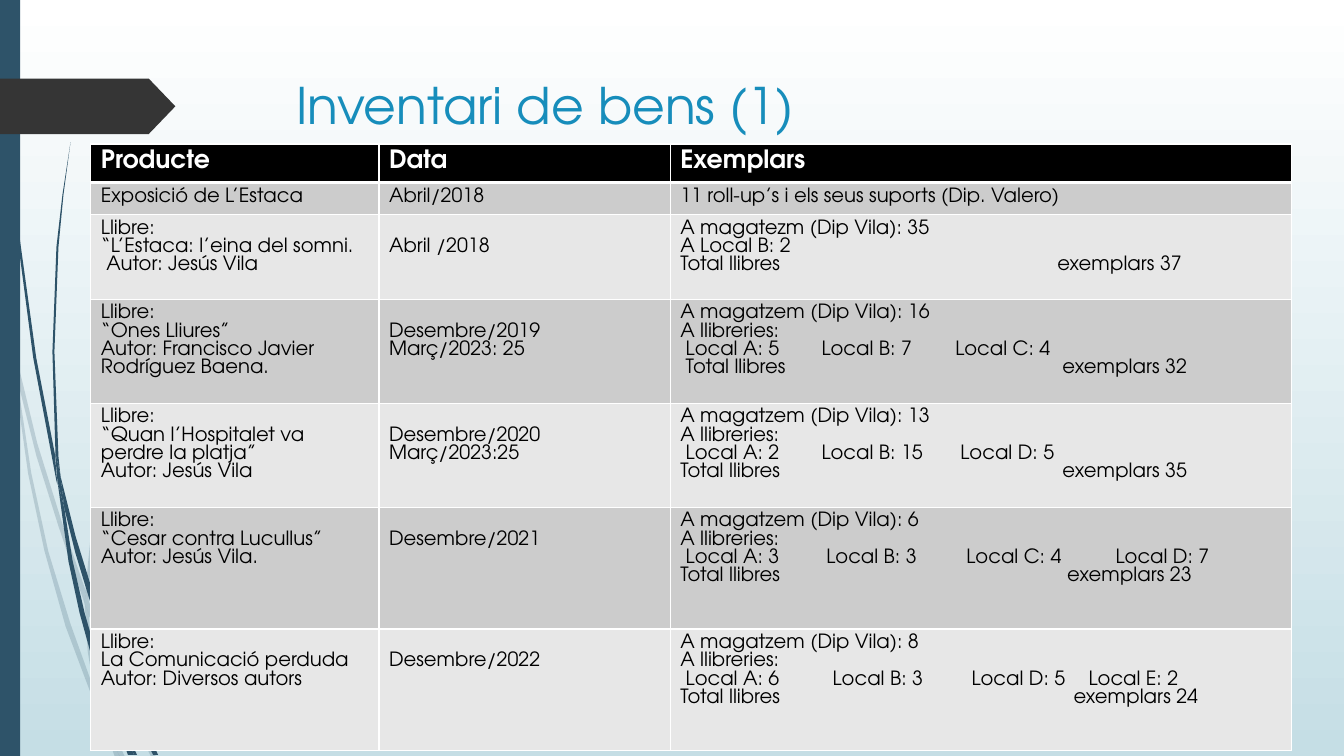
"""Build the slide with the inventory of goods."""
import pptx
import pptx.dml.color
import pptx.enum.shapes
import pptx.enum.text
import pptx.oxml
import pptx.oxml.ns
import pptx.util

Cm = pptx.util.Cm
Pt = pptx.util.Pt
DRAWING = pptx.oxml.ns.nsdecls("a")
NAVY, CHARCOAL, BLUE = "2E5369", "353535", "178DBB"
BLACK, WHITE, BANDS = "000000", "FFFFFF", ("CCCCCC", "E7E7E7")
HUNDREDTH_INCH = Cm(0.0254)

PALE_STEMS = [
    [(11, 350), (9, 322), (0, 282), (0, 299), (10, 344)],
    [(58, 522), (84, 599), (85, 586), (62, 520), (37, 440), (14, 345), (17, 376), (36, 452)],
    [(92, 607), (88, 596), (88, 610), (123, 694), (150, 751), (155, 751), (127, 692)],
    [(119, 751), (124, 751), (105, 711)],
    [(93, 683), (70, 619), (48, 547), (31, 469), (17, 376), (11, 350), (28, 470), (44, 546),
     (65, 621), (92, 693), (101, 714), (99, 707)],
    [(84, 599), (87, 646), (93, 683), (96, 692), (105, 711), (103, 706), (91, 646), (88, 610),
     (88, 608)],
    [(88, 584), (94, 522), (110, 462), (132, 405), (160, 349), (192, 296), (229, 245), (268, 198),
     (290, 175), (312, 154), (312, 153), (289, 175), (268, 197), (228, 244), (190, 295),
     (158, 348), (129, 404), (107, 461), (91, 521), (85, 584), (85, 586), (88, 596)],
    [(101, 714), (114, 751), (119, 751)],
    [(88, 608), (88, 610), (88, 596), (85, 586), (84, 599)],
    [(96, 692), (93, 683), (99, 707), (101, 714), (119, 751), (105, 711)],
]
DARK_STEMS = [
    [(7, 110), (17, 233), (33, 355), (56, 477), (57, 481), (55, 457), (55, 453), (36, 355),
     (19, 232), (8, 109), (5, 48), (4, 0), (3, 0), (4, 48)],
    [(88, 592), (106, 645), (106, 633), (106, 631), (93, 590), (75, 532), (60, 472), (64, 505),
     (75, 549)],
    [(113, 649), (110, 641), (111, 656), (132, 708), (152, 749), (157, 749), (136, 706)],
    [(110, 691), (98, 657), (84, 608), (72, 556), (64, 505), (57, 477), (68, 557), (79, 608),
     (93, 659), (111, 708), (117, 722), (116, 717)],
    [(60, 472), (58, 453), (54, 349), (58, 245), (63, 193), (70, 141), (62, 193), (56, 245),
     (52, 349), (55, 449)],
    [(133, 749), (136, 749), (122, 719)],
    [(57, 477), (64, 505), (60, 472), (55, 449), (55, 453)],
    [(111, 633), (115, 592), (125, 552), (139, 513), (158, 476), (180, 440), (205, 406),
     (231, 374), (245, 359), (261, 344), (260, 344), (245, 358), (231, 373), (204, 405),
     (179, 439), (156, 474), (137, 511), (122, 551), (111, 590), (106, 631), (110, 641)],
    [(117, 722), (127, 749), (131, 749)],
    [(106, 645), (110, 691), (116, 706), (122, 719), (121, 716), (111, 656), (109, 651)],
    [(106, 645), (109, 651), (111, 656), (110, 641), (106, 631), (106, 633)],
    [(116, 706), (110, 691), (116, 717), (117, 722), (130, 749), (133, 749), (122, 719)],
]
COLUMN_WIDTHS = (7.26, 7.34, 15.65)
ROW_HEIGHTS = (0.97, 0.81, 2.13, 2.62, 2.62, 3.07, 3.07)
GOODS = [
    ("Producte", "Data", "Exemplars"),
    ("Exposició de L’Estaca", "Abril/2018", "11 roll-up’s i els seus suports (Dip. Valero)"),
    ("Llibre:\n“L’Estaca: l’eina del somni.\n Autor: Jesús Vila", "Abril /2018",
     "A magatezm (Dip Vila): 35\nA Local B: 2\nTotal llibres\texemplars 37"),
    ("Llibre:\n“Ones Lliures”\nAutor: Francisco Javier Rodríguez Baena.",
     "Desembre/2019\nMarç/2023: 25",
     "A magatzem (Dip Vila): 16\nA llibreries:\n Local A: 5\tLocal B: 7\tLocal C: 4\n"
     " Total llibres\texemplars 32"),
    ("Llibre:\n“Quan l’Hospitalet va perdre la platja”\nAutor: Jesús Vila",
     "Desembre/2020\nMarç/2023:25",
     "A magatzem (Dip Vila): 13\nA llibreries:\n Local A: 2\tLocal B: 15\tLocal D: 5\n"
     "Total llibres\texemplars 35"),
    ("Llibre:\n“Cesar contra Lucullus”\nAutor: Jesús Vila.", "Desembre/2021",
     "A magatzem (Dip Vila): 6\nA llibreries:\n Local A: 3\tLocal B: 3\tLocal C: 4\tLocal D: 7\n"
     "Total llibres\texemplars 23"),
    ("Llibre:\nLa Comunicació perduda\nAutor: Diversos autors", "Desembre/2022",
     "A magatzem (Dip Vila): 8\nA llibreries:\n Local A: 6\tLocal B: 3\tLocal D: 5\tLocal E: 2\n"
     "Total llibres\texemplars 24"),
]
SHOP_TABS = {3: (3.56, 6.93), 4: (3.56, 7.06), 5: (3.68, 7.21, 10.97), 6: (3.84, 7.34, 10.29)}
TOTAL_TABS = {2: 9.5, 3: 9.63, 4: 9.63, 5: 9.75, 6: 9.91}


def colour(value):
    """Turn a hex string into a colour."""
    return pptx.dml.color.RGBColor.from_string(value)


class InventoryPage:
    """Hold the style and the current slide."""

    font = "TeX Gyre Adventor"

    def __init__(self, deck):
        """Add a title-only slide with a vertical gradient."""
        self.page = deck.slides.add_slide(deck.slide_layouts[5])
        fill = self.page.background.fill
        fill.gradient()
        fill.gradient_angle = 270
        for stop, value in zip(fill.gradient_stops, (WHITE, "C5DEE5")):
            stop.color.rgb = colour(value)

    def paint(self, shape, value):
        """Give a shape a plain fill without line or shadow."""
        shape.shadow.inherit = False
        shape.fill.solid()
        shape.fill.fore_color.rgb = colour(value)
        shape.line.fill.background()

    def style(self, para, size, value, bold=False):
        """Format every span of a paragraph."""
        for span in para.runs:
            span.font.name = self.font
            span.font.size = Pt(size)
            span.font.bold = bold
            span.font.color.rgb = colour(value)

    def stems(self, outlines, opacity):
        """Draw a group of curved stems."""
        group = self.page.shapes.add_group_shape()
        for first, *others in outlines:
            builder = group.shapes.build_freeform(*first, scale=HUNDREDTH_INCH)
            builder.add_line_segments(others, close=True)
            stem = builder.convert_to_shape()
            self.paint(stem, NAVY)
            if opacity < 100:
                tint = stem.fill._xPr.find(".//" + pptx.oxml.ns.qn("a:srgbClr"))
                tint.append(pptx.oxml.parse_xml(f'<a:alpha {DRAWING} val="{opacity * 1000}"/>'))

    def block(self, kind, top, width, height, value):
        """Draw a preset shape at the left edge."""
        shape = self.page.shapes.add_shape(kind, 0, Cm(top), Cm(width), Cm(height))
        self.paint(shape, value)
        return shape

    def title(self, text):
        """Fill and place the title placeholder."""
        box = self.page.shapes.title
        box.left, box.top, box.width, box.height = Cm(7.21), Cm(1.73), Cm(24.77), Cm(3.56)
        frame = box.text_frame
        frame.text = text
        frame.word_wrap = True
        frame.auto_size = pptx.enum.text.MSO_AUTO_SIZE.NONE
        frame.vertical_anchor = pptx.enum.text.MSO_ANCHOR.TOP
        frame.paragraphs[0].alignment = pptx.enum.text.PP_ALIGN.LEFT
        self.style(frame.paragraphs[0], 36, BLUE)

    def borders(self, cell, row):
        """Draw white cell borders, thicker under the header."""
        widths = {"L": 1, "R": 1, "T": 3 if row == 1 else 1, "B": 3 if row == 0 else 1}
        properties = cell._tc.get_or_add_tcPr()
        for side, width in widths.items():
            properties.append(pptx.oxml.parse_xml(
                f'<a:ln{side} {DRAWING} w="{Pt(width)}"><a:solidFill>'
                f'<a:srgbClr val="{WHITE}"/></a:solidFill></a:ln{side}>'))

    def tabs(self, para, stops):
        """Set left tab stops on a paragraph."""
        marks = "".join(f'<a:tab pos="{Cm(stop)}" algn="l"/>' for stop in stops)
        para._p.get_or_add_pPr().append(
            pptx.oxml.parse_xml(f"<a:tabLst {DRAWING}>{marks}</a:tabLst>"))

    def cell(self, cell, row, column, text):
        """Fill and format one table cell."""
        header = row == 0
        self.borders(cell, row)
        cell.fill.solid()
        cell.fill.fore_color.rgb = colour(BLACK if header else BANDS[(row - 1) % 2])
        cell.margin_top = Cm(0.13) + (Pt(13) if column == 1 and row > 1 else 0)
        cell.text_frame.text = text
        for para in cell.text_frame.paragraphs:
            para.line_spacing = Pt(17 if header else 13)
            self.style(para, 18 if header else 14, WHITE if header else BLACK, header)
            if "\t" in para.text:
                total = "Total" in para.text
                self.tabs(para, (TOTAL_TABS[row],) if total else SHOP_TABS[row])

    def table(self, rows):
        """Add the inventory table."""
        grid = self.page.shapes.add_table(
            len(rows), len(COLUMN_WIDTHS), Cm(2.29), Cm(3.63),
            Cm(sum(COLUMN_WIDTHS)), Cm(sum(ROW_HEIGHTS))).table
        for column, width in zip(grid.columns, COLUMN_WIDTHS):
            column.width = Cm(width)
        for row, height in zip(grid.rows, ROW_HEIGHTS):
            row.height = Cm(height)
        for row, texts in enumerate(rows):
            for column, text in enumerate(texts):
                self.cell(grid.cell(row, column), row, column, text)


def main():
    """Build and save the deck."""
    deck = pptx.Presentation()
    deck.slide_width, deck.slide_height = Cm(33.87), Cm(19.05)
    inventory = InventoryPage(deck)
    inventory.stems(PALE_STEMS, 20)
    inventory.stems(DARK_STEMS, 100)
    kinds = pptx.enum.shapes.MSO_SHAPE
    inventory.block(kinds.RECTANGLE, 0, 0.51, 19.05, NAVY)
    arrow = inventory.block(kinds.PENTAGON, 1.98, 4.42, 1.4, CHARCOAL)
    arrow.adjustments[0] = 0.48
    inventory.title("Inventari de bens (1)")
    inventory.table(GOODS)
    deck.save("out.pptx")


if __name__ == "__main__":
    main()
